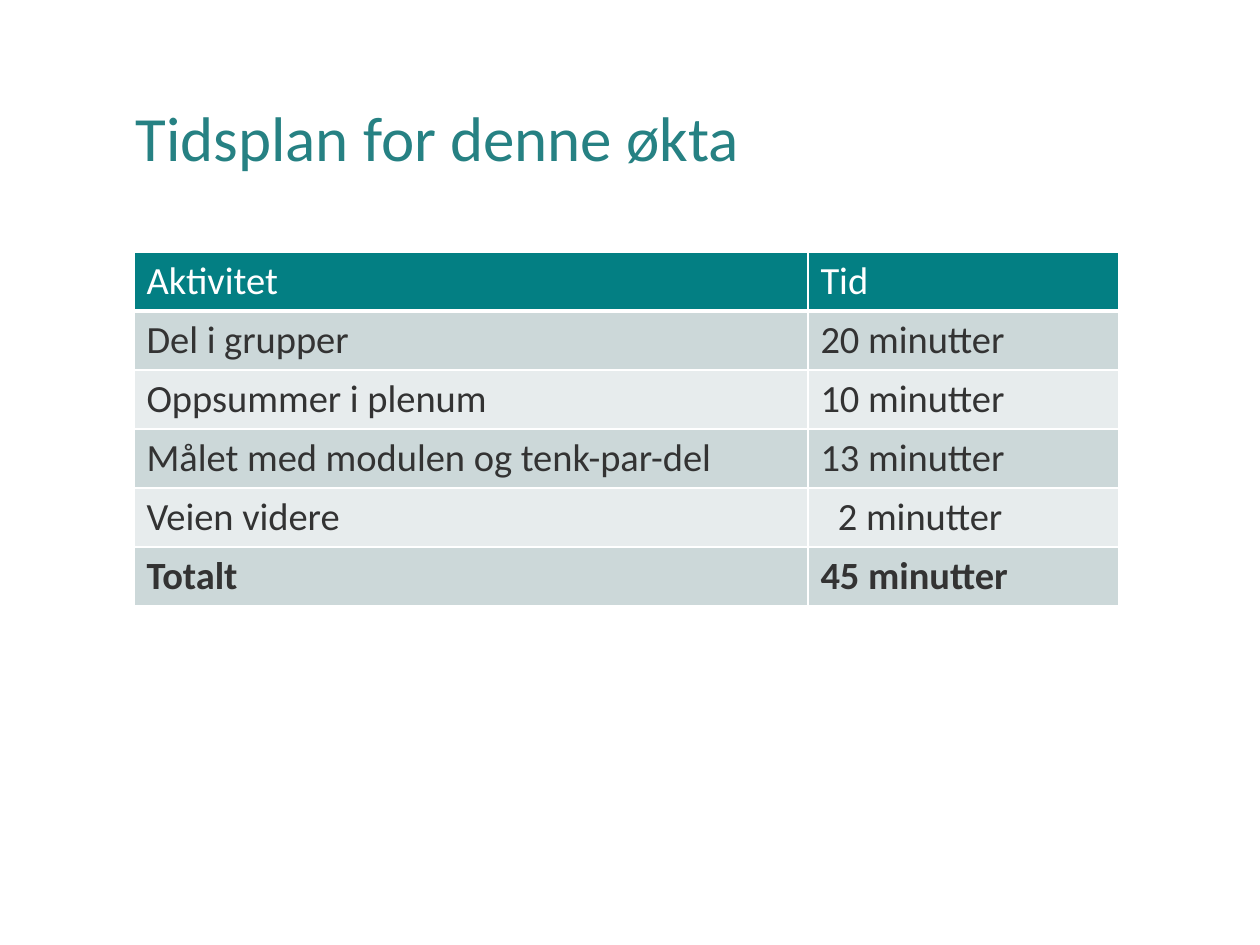
from lxml import etree
from pptx import Presentation
from pptx.dml.color import RGBColor
from pptx.enum.text import MSO_ANCHOR
from pptx.oxml.ns import qn
from pptx.util import Pt

PX = 914400 / 126
MIDDLE = MSO_ANCHOR.MIDDLE
TITLE_TEAL = RGBColor(0x26, 0x81, 0x83)
HEADER_TEAL = RGBColor(0x03, 0x7F, 0x83)
BAND_DARK = RGBColor(0xCC, 0xD8, 0xD9)
BAND_LIGHT = RGBColor(0xE7, 0xEC, 0xED)
INK = RGBColor(0x33, 0x33, 0x33)
WHITE = RGBColor(0xFF, 0xFF, 0xFF)

SCHEDULE = [
    ("Aktivitet", "Tid"),
    ("Del i grupper", "20 minutter"),
    ("Oppsummer i plenum", "10 minutter"),
    ("Målet med modulen og tenk-par-del", "13 minutter"),
    ("Veien videre", "2 minutter"),
    ("Totalt", "45 minutter"),
]


def px(length):
    return round(length * PX)


class SlideBuilder:
    font_name = "Calibri"

    def __init__(self, page):
        self.page = page

    def style(self, para, size, color, bold=False):
        font = para.font
        font.name = self.font_name
        font.size = Pt(size)
        font.bold = bold
        font.color.rgb = color

    def title(self, text, left, top, width, height):
        box = self.page.shapes.add_textbox(px(left), px(top), px(width), px(height))
        frame = box.text_frame
        frame.word_wrap = True
        frame.vertical_anchor = MIDDLE
        para = frame.paragraphs[0]
        para.text = text
        para.line_spacing = 0.9
        self.style(para, 36, TITLE_TEAL)

    def border(self, cell, side, points):
        properties = cell._tc.get_or_add_tcPr()
        line = etree.SubElement(properties, qn(f"a:ln{side}"), w=str(Pt(points)))
        fill = etree.SubElement(line, qn("a:solidFill"))
        etree.SubElement(fill, qn("a:srgbClr"), val=str(WHITE))

    def cell(self, cell, text, fill, color, bold, top_line, bottom_line):
        for side, points in zip("LRTB", (1, 1, top_line, bottom_line)):
            self.border(cell, side, points)
        cell.fill.solid()
        cell.fill.fore_color.rgb = fill
        para = cell.text_frame.paragraphs[0]
        para.text = text
        self.style(para, 22, color, bold)

    def table(self, rows, left, top, widths, row_height):
        frame = self.page.shapes.add_table(
            len(rows), len(widths), px(left), px(top),
            px(sum(widths)), px(row_height * len(rows)))
        table = frame.table
        for column, width in zip(table.columns, widths):
            column.width = px(width)
        for index, texts in enumerate(rows):
            table.rows[index].height = px(row_height)
            header = index == 0
            band = BAND_DARK if index % 2 else BAND_LIGHT
            for column, text in enumerate(texts):
                self.cell(
                    table.cell(index, column), text,
                    fill=HEADER_TEAL if header else band,
                    color=WHITE if header else INK,
                    bold=index == len(rows) - 1,
                    top_line=3 if index == 1 else 1,
                    bottom_line=3 if header else 1)
        return table


def main():
    deck = Presentation()
    deck.slide_width = px(1260)
    deck.slide_height = px(945)
    page = deck.slides.add_slide(deck.slide_layouts[6])
    builder = SlideBuilder(page)
    builder.title("Tidsplan for denne økta", 123, 50, 1045, 183)
    table = builder.table(SCHEDULE, 134, 252, (674, 311), 59)
    table.cell(4, 1).margin_left = px(30)
    deck.save("out.pptx")


if __name__ == "__main__":
    main()
